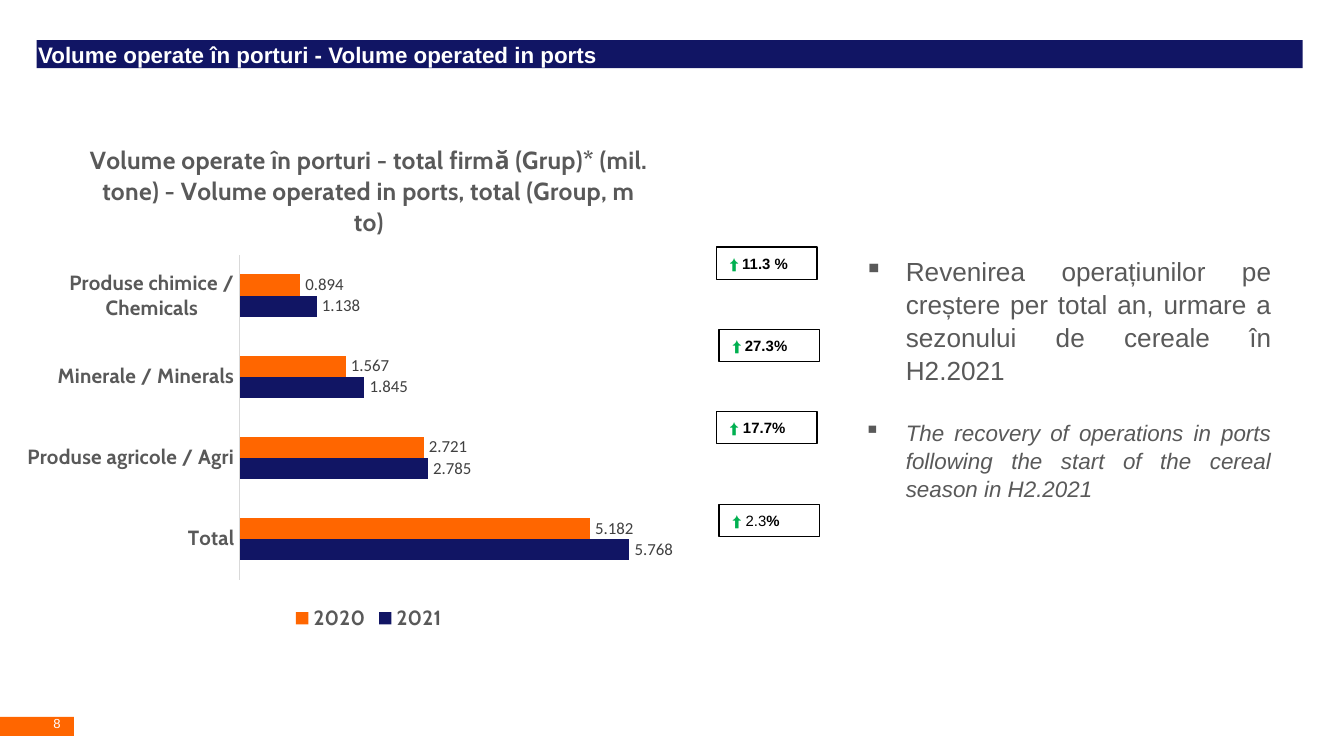
"""Build the slide on volumes operated in ports, 2020 against 2021."""
import pptx
import pptx.chart.data
import pptx.dml.color
import pptx.enum.chart
import pptx.enum.shapes
import pptx.enum.text
import pptx.oxml
import pptx.oxml.ns
import pptx.util

Cm, Pt = pptx.util.Cm, pptx.util.Pt
ALIGN = pptx.enum.text.PP_ALIGN
MIDDLE = pptx.enum.text.MSO_ANCHOR.MIDDLE

COLORS = {
    "navy": "111564", "orange": "FF6600", "white": "FFFFFF", "black": "000000",
    "green": "00B050", "grey": "595959", "label": "404040", "axis": "D9D9D9",
}
CATEGORIES = ["Total", "Produse agricole / Agri", "Minerale / Minerals",
              "Produse chimice / Chemicals"]
SERIES = [
    ("2021", [5.768, 2.785, 1.845, 1.138], "navy"),
    ("2020", [5.182, 2.721, 1.567, 0.894], "orange"),
]
CHART_TITLE = ("Volume operate în porturi - total firmă (Grup)* (mil. tone) - "
               "Volume operated in ports, total (Group, m to)")
GROWTH = [
    (13.54, 4.67, "Calibri", [("11.3 %", True)]),
    (13.59, 6.22, "Calibri", [("27.3%", True)]),
    (13.54, 7.77, "Arial", [("17.7%", True)]),
    (13.59, 9.53, "Arial", [("2.3", False), ("%", True)]),
]
COMMENTS = [
    ("Revenirea operațiunilor pe creștere per total an, urmare a sezonului "
     "de cereale în H2.2021", 14, False, 0),
    ("The recovery of operations in ports following the start of the cereal "
     "season in H2.2021", 12, True, 17),
]


def rgb(name):
    return pptx.dml.color.RGBColor.from_string(COLORS[name])


def style_font(font, size, color, face="Arial", bold=False, italic=False):
    font.size, font.name = Pt(size), face
    font.bold, font.italic = bold, italic
    font.color.rgb = rgb(color)


def add_text(paragraph, text, **style):
    run = paragraph.add_run()
    run.text = text
    style_font(run.font, **style)


def clear_margins(frame):
    frame.margin_left = frame.margin_right = 0
    frame.margin_top = frame.margin_bottom = 0


def fill_solid(fill, color):
    fill.solid()
    fill.fore_color.rgb = rgb(color)


def add_box(slide, left, top, width, height):
    box = slide.shapes.add_shape(pptx.enum.shapes.MSO_SHAPE.RECTANGLE,
                                 Cm(left), Cm(top), Cm(width), Cm(height))
    box.shadow.inherit = False
    return box


def add_heading(slide, text):
    heading = slide.shapes.title
    heading.left, heading.top = Cm(0.69), Cm(0.76)
    heading.width, heading.height = Cm(23.93), Cm(0.53)
    fill_solid(heading.fill, "navy")
    frame = heading.text_frame
    clear_margins(frame)
    frame.margin_left = Cm(0.03)
    frame.auto_size = pptx.enum.text.MSO_AUTO_SIZE.NONE
    frame.vertical_anchor = MIDDLE
    frame.paragraphs[0].alignment = ALIGN.LEFT
    add_text(frame.paragraphs[0], text, size=12, color="white", bold=True)


def add_page_number(slide, number):
    tab = add_box(slide, 0, 13.54, 1.4, 0.36)
    fill_solid(tab.fill, "orange")
    tab.line.fill.background()
    label = slide.shapes.add_textbox(Cm(1.01), Cm(13.51), Cm(0.4), Cm(0.38))
    clear_margins(label.text_frame)
    add_text(label.text_frame.paragraphs[0], number, size=7, color="white")


def add_growth(slide, left, top, arrow_face, parts):
    badge = add_box(slide, left, top, 1.9, 0.61)
    badge.fill.background()
    badge.line.color.rgb = rgb("black")
    badge.line.width = Pt(0.75)
    badge.text_frame.vertical_anchor = MIDDLE
    paragraph = badge.text_frame.paragraphs[0]
    paragraph.alignment = ALIGN.LEFT
    add_text(paragraph, "⬆ ", size=8, color="green", face=arrow_face, bold=True)
    for text, bold in parts:
        add_text(paragraph, text, size=8, color="black", bold=bold)


def add_bullet(paragraph, symbol):
    properties = paragraph._p.get_or_add_pPr()
    properties.set("marL", str(Cm(0.79)))
    properties.set("indent", str(-Cm(0.79)))
    properties.append(pptx.oxml.parse_xml(
        f'<a:buChar {pptx.oxml.ns.nsdecls("a")} char="{symbol}"/>'))


def add_comments(slide):
    frame = slide.shapes.add_textbox(Cm(16.08), Cm(4.67), Cm(8.2), Cm(4.78)).text_frame
    frame.word_wrap = True
    for index, (text, size, italic, gap) in enumerate(COMMENTS):
        paragraph = frame.add_paragraph() if index else frame.paragraphs[0]
        paragraph.alignment = ALIGN.JUSTIFY
        paragraph.line_spacing = 1.05
        paragraph.space_before = Pt(gap)
        add_bullet(paragraph, "▪")
        add_text(paragraph, text, size=size, color="grey", italic=italic)


def place_plot(chart, **fractions):
    values = "".join(f'<c:{key} val="{value}"/>' for key, value in fractions.items())
    layout = pptx.oxml.parse_xml(
        f'<c:layout {pptx.oxml.ns.nsdecls("c")}><c:manualLayout>'
        '<c:layoutTarget val="inner"/><c:xMode val="edge"/><c:yMode val="edge"/>'
        f'{values}</c:manualLayout></c:layout>')
    plot_area = chart._chartSpace.chart.plotArea
    for old in plot_area.findall(pptx.oxml.ns.qn("c:layout")):
        plot_area.remove(old)
    plot_area.insert(0, layout)


def style_axes(chart):
    category_axis, value_axis = chart.category_axis, chart.value_axis
    style_font(category_axis.tick_labels.font, 11, "grey", "Cabin", bold=True)
    category_axis.major_tick_mark = pptx.enum.chart.XL_TICK_MARK.NONE
    category_axis.format.line.color.rgb = rgb("axis")
    category_axis.format.line.width = Pt(0.75)
    value_axis.minimum_scale, value_axis.maximum_scale = 0, 7
    value_axis.has_major_gridlines = False
    value_axis.visible = False


def add_volume_chart(slide):
    data = pptx.chart.data.CategoryChartData(number_format="0.000")
    data.categories = CATEGORIES
    for name, values, _ in SERIES:
        data.add_series(name, values)
    chart = slide.shapes.add_chart(
        pptx.enum.chart.XL_CHART_TYPE.BAR_CLUSTERED,
        Cm(0.2), Cm(2.29), Cm(13.54), Cm(9.73), data).chart
    style_font(chart.font, 10, "black", "Calibri")
    add_text(chart.chart_title.text_frame.paragraphs[0], CHART_TITLE,
             size=13.2, color="grey", face="Cabin", bold=True)
    chart.has_legend = True
    chart.legend.position = pptx.enum.chart.XL_LEGEND_POSITION.BOTTOM
    chart.legend.include_in_layout = False
    style_font(chart.legend.font, 11, "grey", "Cabin", bold=True)
    style_axes(chart)
    place_plot(chart, x=0.32, y=0.26, w=0.66, h=0.63)
    plot = chart.plots[0]
    plot.gap_width, plot.overlap, plot.vary_by_categories = 182, 0, False
    for series, (_, _, color) in zip(plot.series, SERIES):
        fill_solid(series.format.fill, color)
        labels = series.data_labels
        labels.show_value = True
        labels.position = pptx.enum.chart.XL_LABEL_POSITION.OUTSIDE_END
        style_font(labels.font, 9, "label", "Calibri")


def main():
    deck = pptx.Presentation()
    deck.slide_width, deck.slide_height = Cm(25.4), Cm(14.28)
    slide = deck.slides.add_slide(deck.slide_layouts.get_by_name("Title Only"))
    add_heading(slide, "Volume operate în porturi - Volume operated in ports")
    add_page_number(slide, "8")
    add_volume_chart(slide)
    add_comments(slide)
    for badge in GROWTH:
        add_growth(slide, *badge)
    deck.save("out.pptx")


if __name__ == "__main__":
    main()
